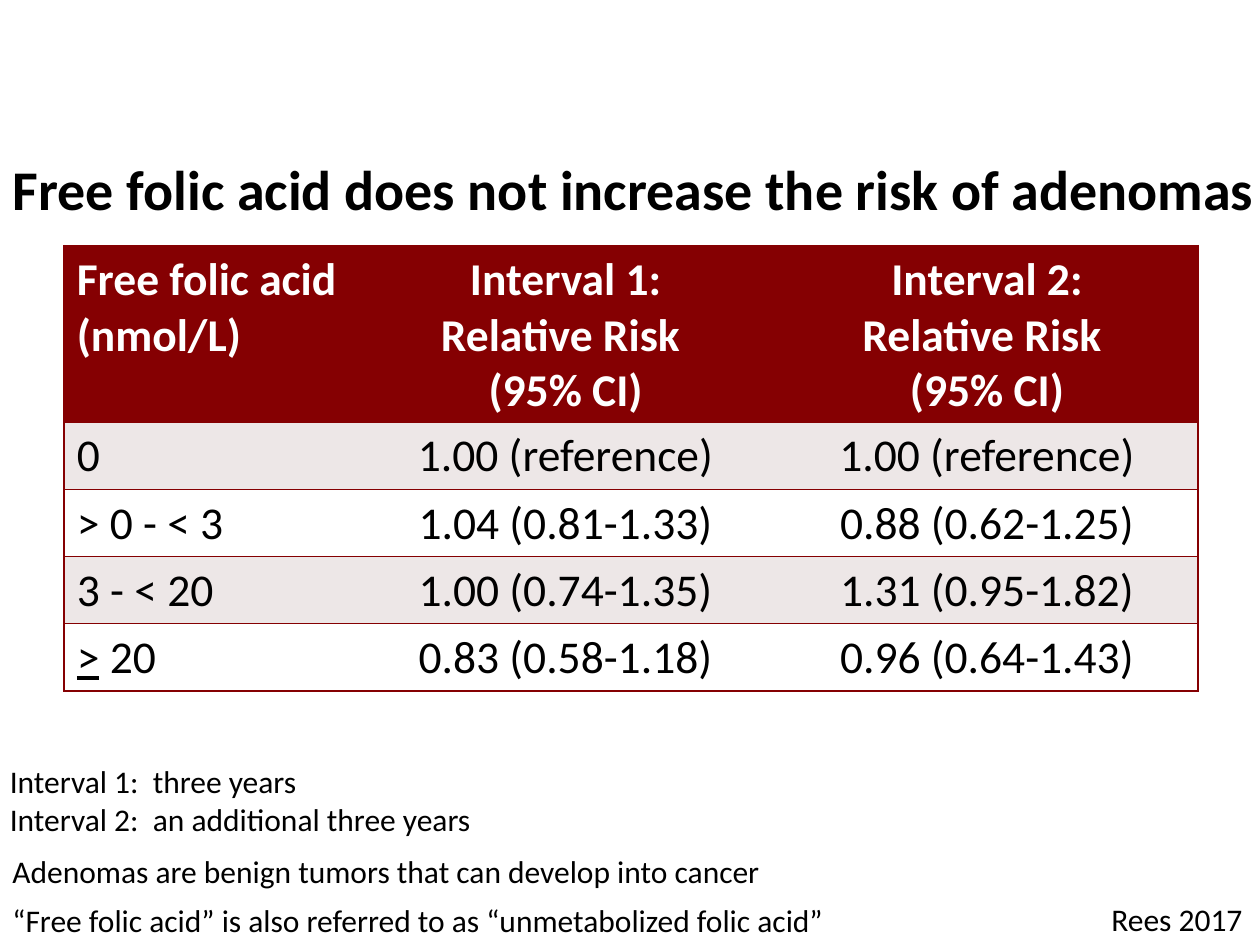
from dataclasses import dataclass
from lxml.etree import SubElement
from pptx import Presentation
from pptx.dml.color import RGBColor
from pptx.enum.text import MSO_ANCHOR, MSO_AUTO_SIZE, PP_ALIGN
from pptx.oxml.ns import qn
from pptx.util import Inches, Pt


@dataclass(frozen=True)
class Theme:
    face: str = "Calibri"
    ink: str = "000000"
    white: str = "FFFFFF"
    red: str = "850002"
    band: str = "EDE7E7"
    head: int = 32
    grid: int = 26
    note: int = 18


class Deck:
    def __init__(self, theme):
        self.theme = theme
        self.file = Presentation()
        self.file.slide_width = Inches(10)
        self.file.slide_height = Inches(7.5)
        self.slide = self.file.slides.add_slide(self.file.slide_layouts[5])

    def place(self, shape, *box):
        for name, size in zip(("left", "top", "width", "height"), box):
            setattr(shape, name, Inches(size))

    def style(self, font, size, color, bold=False):
        form = {"name": self.theme.face, "size": Pt(size), "bold": bold}
        for name, value in form.items():
            setattr(font, name, value)
        font.color.rgb = RGBColor.from_string(color)

    def label(self, frame, text, size, color, bold=False, align=PP_ALIGN.LEFT):
        frame.text = text
        for para in frame.paragraphs:
            para.alignment = align
            for run in para.runs:
                self.style(run.font, size, color, bold)

    def title(self, text, *box):
        shape = self.slide.shapes.title
        self.place(shape, *box)
        frame = shape.text_frame
        self.label(frame, text, self.theme.head, self.theme.ink, True)
        form = {"word_wrap": True, "auto_size": MSO_AUTO_SIZE.NONE,
                "vertical_anchor": MSO_ANCHOR.MIDDLE}
        for name, value in form.items():
            setattr(frame, name, value)
        frame.paragraphs[0].line_spacing = 0.9

    def note(self, text, *box, align=PP_ALIGN.LEFT):
        shape = self.slide.shapes.add_textbox(*map(Inches, box))
        shape.text_frame.word_wrap = True
        self.label(shape.text_frame, text, self.theme.note, self.theme.ink, align=align)

    def edge(self, cell, sides):
        props = cell._tc.get_or_add_tcPr()
        for side in "LRTB":
            line = SubElement(props, qn(f"a:ln{side}"), w=str(Pt(1)))
            if side in sides:
                fill = SubElement(line, qn("a:solidFill"))
                SubElement(fill, qn("a:srgbClr"), val=self.theme.red)
            else:
                SubElement(line, qn("a:noFill"))

    def table(self, rows, left, top, wide, tall):
        look = self.theme
        shape = self.slide.shapes.add_table(
            len(rows), len(wide), Inches(left), Inches(top),
            Inches(sum(wide)), Inches(sum(tall)))
        table = shape.table
        for col, size in zip(table.columns, wide):
            col.width = Inches(size)
        for row, size in zip(table.rows, tall):
            row.height = Inches(size)
        last = len(wide) - 1
        for i, row in enumerate(rows):
            back = look.red if i == 0 else look.band if i % 2 else look.white
            color = look.white if i == 0 else look.ink
            for j, text in enumerate(row):
                cell = table.cell(i, j)
                self.edge(cell, "TB" + "L" * (j == 0) + "R" * (j == last))
                cell.fill.solid()
                cell.fill.fore_color.rgb = RGBColor.from_string(back)
                align = PP_ALIGN.CENTER if j else PP_ALIGN.LEFT
                self.label(cell.text_frame, text, look.grid, color, i == 0, align)
        return table

    def mark(self, cell, sign, rest):
        para = cell.text_frame.paragraphs[0]
        first = para.runs[0]
        first.text = sign
        first.font.underline = True
        run = para.add_run()
        run.text = rest
        self.style(run.font, self.theme.grid, self.theme.ink)


def main():
    deck = Deck(Theme())
    deck.title("Free folic acid does not increase the risk of adenomas", 0, 0.8, 10.07, 1.45)
    deck.note("Rees 2017", 8.57, 7.09, 1.39, 0.4, align=PP_ALIGN.RIGHT)
    deck.note("“Free folic acid” is also referred to as “unmetabolized folic acid”",
              0, 7.1, 7.65, 0.4)
    deck.note("Adenomas are benign tumors that can develop into cancer", 0, 6.71, 7.65, 0.4)
    deck.note("Interval 1:  three years\nInterval 2:  an additional three years",
              -0.02, 6, 6.83, 0.71)
    heads = [f"Interval {n}:\nRelative Risk \n(95% CI)" for n in (1, 2)]
    rows = [
        ("Free folic acid (nmol/L)", *heads),
        ("0", "1.00 (reference)", "1.00 (reference)"),
        ("> 0 - < 3", "1.04 (0.81-1.33)", "0.88 (0.62-1.25)"),
        ("3 - < 20", "1.00 (0.74-1.35)", "1.31 (0.95-1.82)"),
        ("> 20", "0.83 (0.58-1.18)", "0.96 (0.64-1.43)"),
    ]
    table = deck.table(rows, 0.51, 1.95, (2.31, 3.34, 3.35), (1.4,) + (0.53,) * 4)
    deck.mark(table.cell(4, 0), ">", " 20")
    deck.file.save("out.pptx")


if __name__ == "__main__":
    main()
